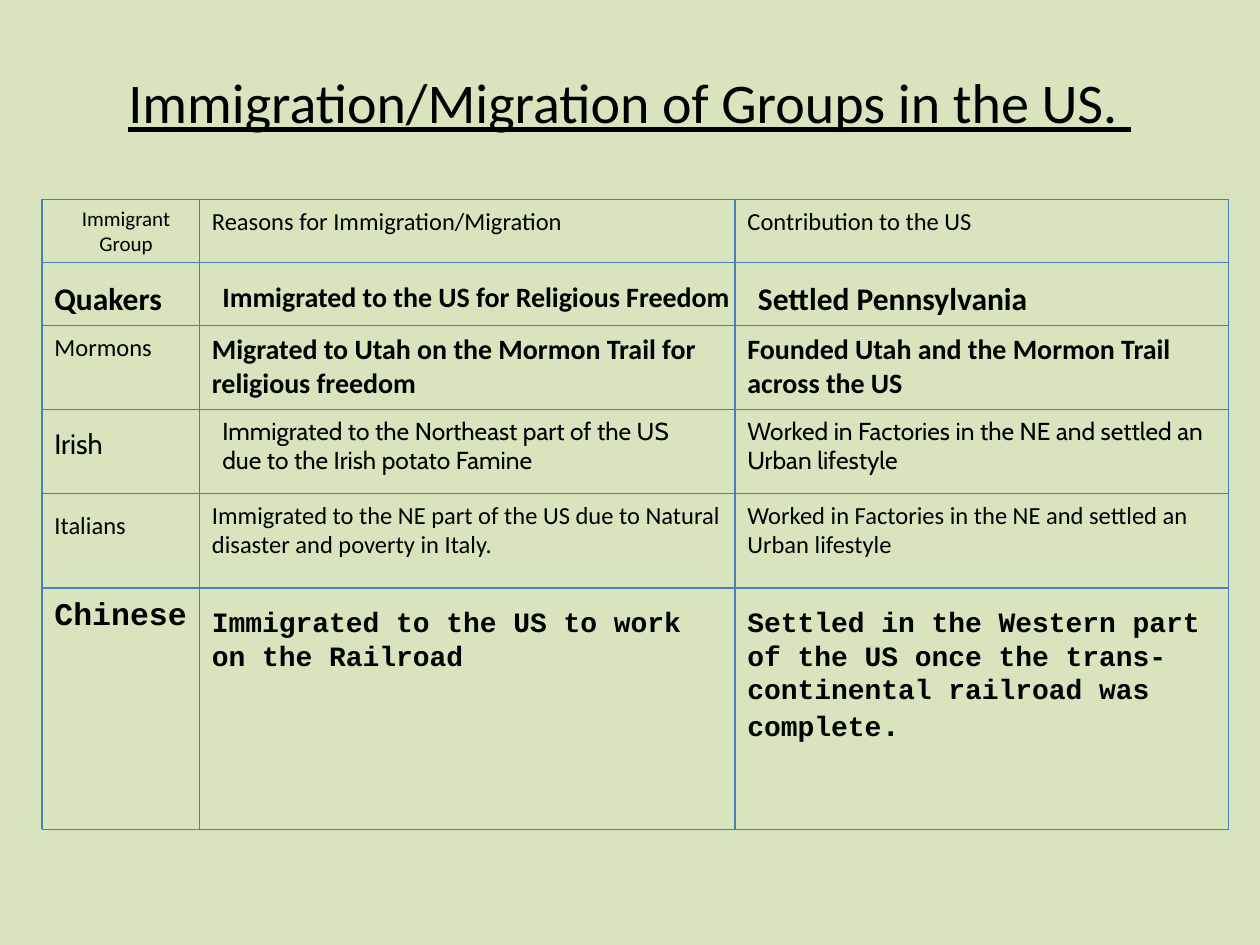
from lxml.etree import SubElement
from pptx import Presentation
from pptx.dml.color import RGBColor as RGB
from pptx.enum.shapes import MSO_CONNECTOR as Conn
from pptx.enum.text import MSO_ANCHOR as Anchor, MSO_AUTO_SIZE as Auto, PP_ALIGN as Align
from pptx.oxml.ns import qn
from pptx.util import Pt

THEME = {
    "background": RGB(0xD7, 0xE4, 0xBD),
    "rule": RGB(0x4B, 0x7E, 0xBC),
    "ink": RGB(0, 0, 0),
    "rule_width": 0.75,
    "title": {"name": "Calibri", "size": Pt(32), "underline": True},
    "label": {"name": "Calibri", "size": Pt(12)},
    "body": {"name": "Calibri", "size": Pt(14)},
    "strong": {"name": "Calibri", "size": Pt(16), "bold": True},
    "large": {"name": "Calibri", "size": Pt(18), "bold": True},
    "cabin": {"name": "Cabin", "size": Pt(14)},
    "cabin_large": {"name": "Cabin", "size": Pt(16)},
    "mono": {"name": "Courier New", "size": Pt(16), "bold": True},
    "mono_large": {"name": "Courier New", "size": Pt(18), "bold": True},
}

TITLE = "Immigration/Migration of Groups in the US. "
COLUMNS = [24, 114, 420, 702]
ROWS = [114, 150, 186, 234, 282, 336, 474]
FACTORIES = "Worked in Factories in the NE and settled an Urban lifestyle"

# fmt: off
CELLS = [
    [([("Immigrant Group", "label")], 0, 0, 96, 36),
     ([("Reasons for Immigration/Migration", "body")], 0, 0, 306, 24),
     ([("Contribution to the US", "body")], 0, 0, 276, 24)],
    [([("Quakers", "large")], 0, 6, 96, 29),
     ([("Immigrated to the US for Religious Freedom", "strong")], 6, 6, 306, 27),
     ([("Settled Pennsylvania", "large")], 6, 6, 264, 29)],
    [([("Mormons", "body")], 0, 0, 90, 24),
     ([("Migrated to Utah on the Mormon Trail for religious freedom", "strong")], 0, 0, 306, 46),
     ([("Founded Utah and the Mormon Trail across the US", "strong")], 0, 0, 276, 46)],
    [([("Irish", "cabin_large")], 0, 6, 90, 27),
     ([("Immigrated to the Northeast part of the US due to the Irish potato Famine", "cabin")], 6, 0, 294, 41),
     ([(FACTORIES, "cabin")], 0, 0, 282, 41)],
    [([("Italians", "body")], 0, 6, 90, 24),
     ([("Immigrated to the NE part of the US due to Natural disaster and poverty in Italy.", "body")], 0, 0, 306, 58),
     ([(FACTORIES, "body")], 0, 0, 282, 41)],
    [([("Chinese", "mono_large")], 0, 0, 90.5, 29),
     ([("Immigrated to the US to work on the Railroad", "mono")], 0, 6, 306, 46),
     ([("Settled in the Western part of the US once the trans-continental railroad was complete", "mono"),
       (".", "mono_large")], 0, 6, 282, 87)],
]
# fmt: on


def add_text(s, box, runs, **frame):
    tf = s.shapes.add_textbox(*map(Pt, box)).text_frame
    for key, value in {"word_wrap": True, **frame}.items():
        setattr(tf, key, value)
    p = tf.paragraphs[0]
    for text, style in runs:
        r = p.add_run()
        r.text = text
        r.font.color.rgb = THEME["ink"]
        for key, value in THEME[style].items():
            setattr(r.font, key, value)
    return p


def add_rule(s, *ends):
    line = s.shapes.add_connector(Conn.STRAIGHT, *map(Pt, ends))
    line.line.color.rgb = THEME["rule"]
    line.line.width = Pt(THEME["rule_width"])
    SubElement(line._element.spPr, qn("a:effectLst"))


def main():
    prs = Presentation()
    prs.slide_width, prs.slide_height = Pt(720), Pt(540)
    s = prs.slides.add_slide(prs.slide_layouts[6])
    s.background.fill.solid()
    s.background.fill.fore_color.rgb = THEME["background"]

    p = add_text(s, (54, 0, 612, 116), [(TITLE, "title")], vertical_anchor=Anchor.MIDDLE)
    p.alignment = Align.CENTER

    for y in ROWS:
        add_rule(s, COLUMNS[0], y, COLUMNS[-1], y)
    for x in COLUMNS:
        add_rule(s, x, ROWS[0], x, ROWS[-1])

    for y, row in zip(ROWS, CELLS):
        for x, (runs, dx, dy, width, height) in zip(COLUMNS, row):
            box = (x + dx, y + dy, width, height)
            is_label = runs[0][1] == "label"
            fit = Auto.NONE if is_label else Auto.SHAPE_TO_FIT_TEXT
            p = add_text(s, box, runs, auto_size=fit)
            if is_label:
                p.alignment = Align.CENTER
                p.space_before = Pt(2.4)

    prs.save("out.pptx")


if __name__ == "__main__":
    main()
